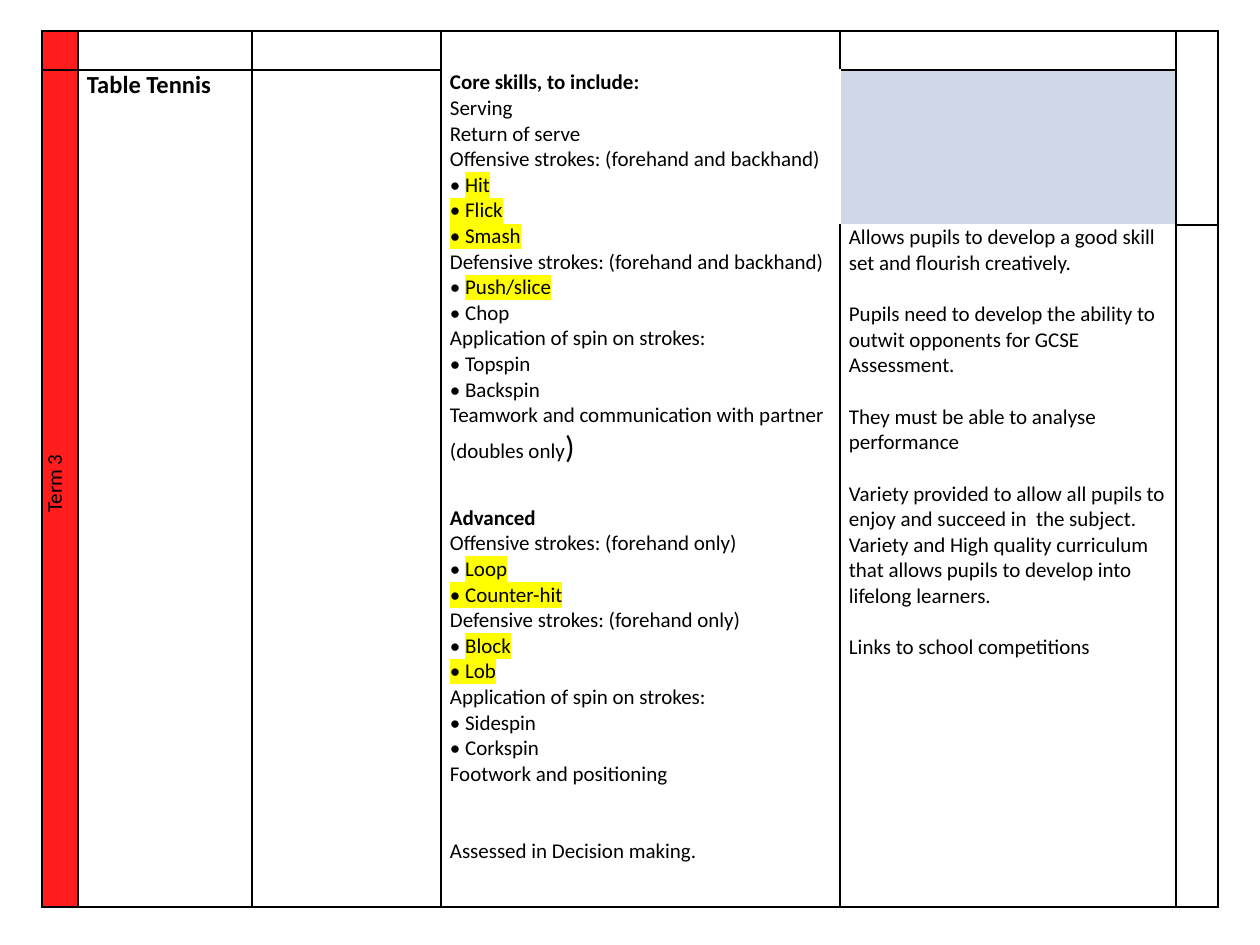
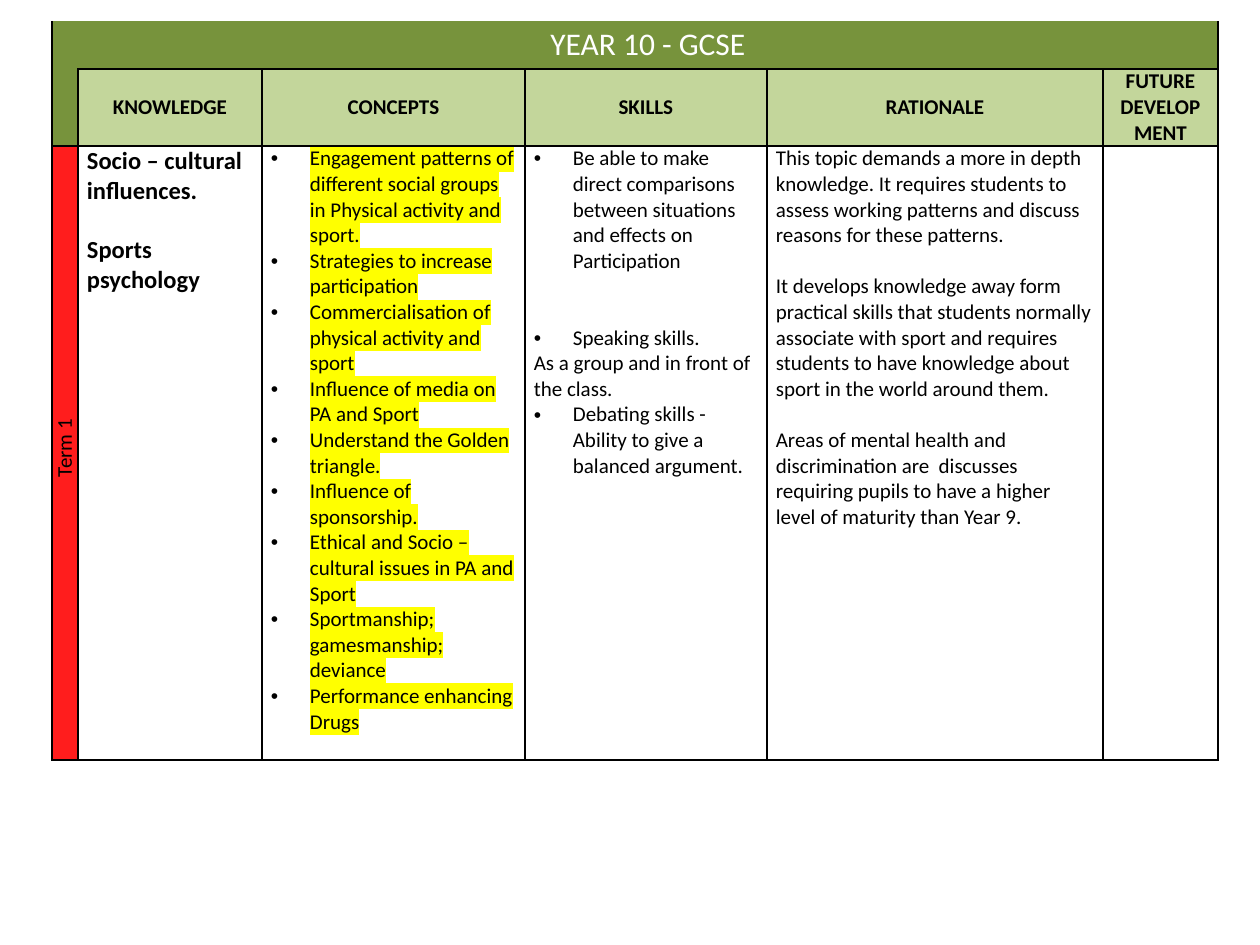
from dataclasses import dataclass, field

from lxml import etree
from pptx import Presentation
from pptx.dml.color import RGBColor
from pptx.enum.text import MSO_ANCHOR, PP_ALIGN
from pptx.oxml.ns import qn
from pptx.util import Pt

PX = 914400 / 126
FONT = "Calibri"
LINE_12, LINE_14, LINE_18 = 14.65, 17.1, 22  # line heights in points
SIDE_MARGIN, BULLET_INDENT, TERM_INDENT = 9, 39, 10

BLACK = RGBColor(0x00, 0x00, 0x00)
WHITE = RGBColor(0xFF, 0xFF, 0xFF)
YELLOW = RGBColor(0xFF, 0xFF, 0x00)
TERM_RED = RGBColor(0xFF, 0x1D, 0x1D)
PALE_BLUE = RGBColor(0xD0, 0xD8, 0xE8)
TITLE_GREEN = RGBColor(0x77, 0x93, 0x3C)
HEADING_GREEN = RGBColor(0xC3, 0xD6, 0x9B)

TOP, MIDDLE = MSO_ANCHOR.TOP, MSO_ANCHOR.MIDDLE
LEFT, CENTER = PP_ALIGN.LEFT, PP_ALIGN.CENTER
SIDES = "LRTB"

CORE_SKILLS = [
    "Serving",
    "Return of serve",
    "Offensive strokes: (forehand and backhand)",
    "• |Hit",
    "|• Flick",
    "|• Smash",
    "Defensive strokes: (forehand and backhand)",
    "• |Push/slice",
    "• Chop",
    "Application of spin on strokes:",
    "• Topspin",
    "• Backspin",
    "Teamwork and communication with partner",
]
ADVANCED_SKILLS = [
    "Offensive strokes: (forehand only)",
    "• |Loop",
    "|• Counter-hit",
    "Defensive strokes: (forehand only)",
    "• |Block",
    "|• Lob",
    "Application of spin on strokes:",
    "• Sidespin",
    "• Corkspin",
    "Footwork and positioning",
]
CONCEPTS = [
    "Engagement patterns of different social groups in Physical activity and sport.",
    "Strategies to increase participation",
    "Commercialisation of physical activity and sport",
    "Influence of media on PA and Sport",
    "Understand the Golden triangle.",
    "Influence of sponsorship.",
    "Ethical and Socio – cultural issues in PA and Sport",
    "Sportmanship; gamesmanship; deviance",
    "Performance enhancing Drugs",
]
HEADINGS = ["KNOWLEDGE", "CONCEPTS", "SKILLS", "RATIONALE", "FUTURE DEVELOPMENT"]


@dataclass
class Line:
    """One paragraph; text after a bar is highlighted, tail is set larger."""
    text: str
    gap: float = 0
    size: int = 12
    bold: bool = False
    color: RGBColor = BLACK
    align: PP_ALIGN = LEFT
    bullet: bool = False
    indent: int = 0
    tail: str = ""


@dataclass
class Box:
    """Content and look of a cell; borders maps a side to a colour or None."""
    lines: list = field(default_factory=list)
    fill: RGBColor = WHITE
    span: tuple = (1, 1)
    anchor: MSO_ANCHOR = TOP
    vertical: bool = False
    borders: dict = field(default_factory=dict)


def px(length):
    return int(length * PX)


def set_values(target, values):
    for name, value in values.items():
        setattr(target, name, value)


def add_solid(parent, tag, color):
    holder = etree.SubElement(parent, qn(tag))
    etree.SubElement(holder, qn("a:srgbClr"), val=str(color))
    return holder


def add_span(para, text, line, size, marked=False):
    span = para.add_run()
    span.text = text
    set_values(span.font, {"size": Pt(size), "bold": line.bold, "name": FONT})
    span.font.color.rgb = line.color
    if marked:
        properties = span.font._element
        highlight = add_solid(properties, "a:highlight", YELLOW)
        properties.find(qn("a:latin")).addprevious(highlight)


def add_bullet(para):
    properties = para._p.get_or_add_pPr()
    properties.set("marL", str(px(BULLET_INDENT)))
    properties.set("indent", str(-px(BULLET_INDENT)))
    etree.SubElement(properties, qn("a:buFont"), typeface="Arial")
    etree.SubElement(properties, qn("a:buChar"), char="•")


def write_lines(frame, lines):
    for number, line in enumerate(lines):
        para = frame.add_paragraph() if number else frame.paragraphs[0]
        set_values(para, {"alignment": line.align, "space_before": Pt(line.gap)})
        if line.bullet:
            add_bullet(para)
        elif line.indent:
            para._p.get_or_add_pPr().set("marL", str(px(line.indent)))
        plain, _, marked = line.text.partition("|")
        if plain:
            add_span(para, plain, line, line.size)
        if marked:
            add_span(para, marked, line, line.size, marked=True)
        if line.tail:
            add_span(para, line.tail, line, 18)


def style_cell(cell, box):
    """Borders go in before the fill, as the schema orders them."""
    set_values(cell, {
        "margin_left": px(SIDE_MARGIN), "margin_right": px(SIDE_MARGIN),
        "margin_top": 0, "margin_bottom": 0, "vertical_anchor": box.anchor,
    })
    properties = cell._tc.get_or_add_tcPr()
    if box.vertical:
        properties.set("vert", "vert270")
    for side in SIDES:
        color = box.borders.get(side, BLACK)
        border = etree.SubElement(properties, qn(f"a:ln{side}"), w=str(Pt(1)))
        if color is None:
            etree.SubElement(border, qn("a:noFill"))
        else:
            add_solid(border, "a:solidFill", color)
    cell.fill.solid()
    cell.fill.fore_color.rgb = box.fill


def add_grid(page, left, top, widths, heights, boxes):
    """Build a table from boxes keyed by (row, column); other cells stay blank."""
    frame = page.shapes.add_table(
        len(heights), len(widths), px(left), px(top),
        px(sum(widths)), px(sum(heights)))
    table = frame.table
    set_values(table, {"first_row": False, "horz_banding": False})
    for column, width in zip(table.columns, widths):
        column.width = px(width)
    for row, height in zip(table.rows, heights):
        row.height = px(height)

    covered = {}
    for (row, column), box in boxes.items():
        for down in range(box.span[0]):
            for across in range(box.span[1]):
                covered[row + down, column + across] = box
    for row in range(len(heights)):
        for column in range(len(widths)):
            style_cell(table.cell(row, column), covered.get((row, column), Box()))
    for (row, column), box in boxes.items():
        cell = table.cell(row, column)
        if box.span != (1, 1):
            cell.merge(table.cell(row + box.span[0] - 1, column + box.span[1] - 1))
        write_lines(cell.text_frame, box.lines)


def term_box(name, rows=1):
    label = Line(name, align=CENTER, indent=TERM_INDENT)
    return Box([label], TERM_RED, (rows, 1), MIDDLE, vertical=True)


def heading_box(text):
    return Box([Line(text, bold=True, align=CENTER)], HEADING_GREEN, anchor=MIDDLE)


def add_table_tennis(page):
    skills = [
        Line("Core skills, to include:", bold=True),
        *map(Line, CORE_SKILLS),
        Line("(doubles only", tail=")"),
        Line("Advanced", gap=LINE_18, bold=True),
        *map(Line, ADVANCED_SKILLS),
        Line("Assessed in Decision making.", gap=2 * LINE_12),
    ]
    rationale = [
        Line("Allows pupils to develop a good skill set and flourish creatively."),
        Line("Pupils need to develop the ability to outwit opponents for GCSE "
             "Assessment.", LINE_12),
        Line("They must be able to analyse performance", LINE_12),
        Line("Variety provided to allow all pupils to enjoy and succeed in  the "
             "subject.", LINE_12),
        Line("Variety and High quality curriculum that allows pupils to develop "
             "into lifelong learners."),
        Line("Links to school competitions", LINE_12),
    ]
    add_grid(page, 42, 31, [36, 174, 189, 399, 336, 42], [39, 155, 682], {
        (0, 0): Box(fill=TERM_RED),
        (0, 3): Box(borders={"B": None}),
        (0, 5): Box(span=(2, 1)),
        (1, 0): term_box("Term 3", rows=2),
        (1, 1): Box([Line("Table Tennis", size=14, bold=True)], span=(2, 1)),
        (1, 2): Box(span=(2, 1)),
        (1, 3): Box(skills, span=(2, 1), borders={"T": None, "R": WHITE}),
        (1, 4): Box(fill=PALE_BLUE, borders={"L": WHITE, "B": WHITE}),
        (2, 4): Box(rationale, borders={"T": WHITE}),
    })


def add_year_10(page):
    title = Line("YEAR 10 - GCSE", size=18, color=WHITE, align=CENTER)
    knowledge = [
        Line("Socio – cultural influences.", size=14, bold=True),
        Line("Sports psychology", LINE_14, size=14, bold=True),
    ]
    concepts = [Line(f"|{text}", bullet=True) for text in CONCEPTS]
    skills = [
        Line("Be able to make direct comparisons between situations and effects "
             "on Participation", bullet=True),
        Line("Speaking skills.", 2 * LINE_12, bullet=True),
        Line("As a group and in front of the class."),
        Line("Debating skills - Ability to give a balanced argument.", bullet=True),
    ]
    rationale = [
        Line("This topic demands a more in depth knowledge. It requires students "
             "to assess working patterns and discuss reasons for these patterns."),
        Line("It develops knowledge away form practical skills that students "
             "normally associate with sport and requires students to have "
             "knowledge about sport in the world around them.", LINE_12),
        Line("Areas of mental health and discrimination are  discusses requiring "
             "pupils to have a higher level of maturity than Year 9.", LINE_12),
    ]
    boxes = {
        (0, 0): Box(fill=TITLE_GREEN, span=(2, 1), borders={"T": None, "R": None}),
        (0, 1): Box([title], TITLE_GREEN, (1, 5), MIDDLE,
                    borders={"T": None, "L": None}),
        (2, 0): term_box("Term 1"),
    }
    for column, heading in enumerate(HEADINGS, 1):
        boxes[1, column] = heading_box(heading)
    for column, lines in enumerate([knowledge, concepts, skills, rationale], 1):
        boxes[2, column] = Box(lines)
    add_grid(page, 52, 21, [26, 184, 263, 242, 336, 115], [48, 77, 614], boxes)


def main():
    deck = Presentation()
    set_values(deck, {"slide_width": px(1260), "slide_height": px(945)})
    blank = deck.slide_layouts[6]
    for add_content in (add_table_tennis, add_year_10):
        add_content(deck.slides.add_slide(blank))
    deck.save("out.pptx")


if __name__ == "__main__":
    main()
